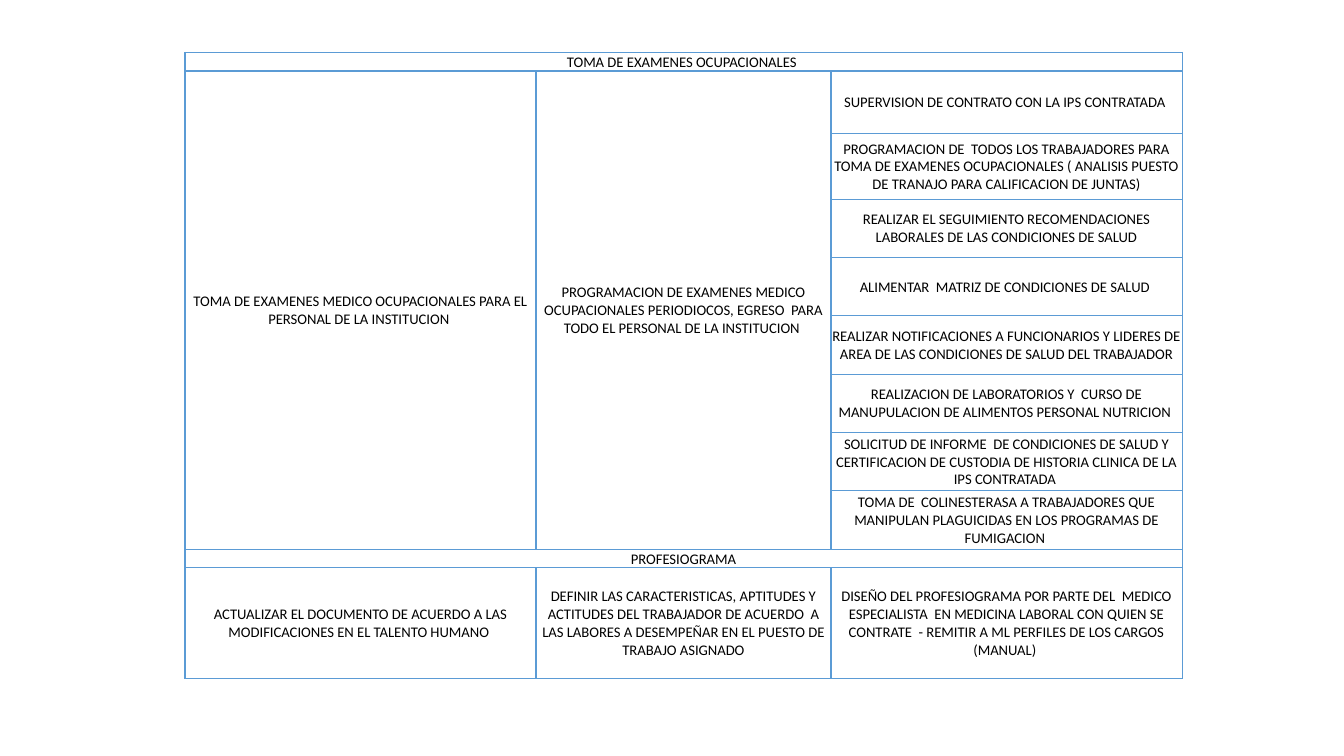
from pptx import Presentation
from pptx.dml.color import RGBColor
from pptx.enum.text import MSO_ANCHOR as Anchor, PP_ALIGN as Align
from pptx.oxml import parse_xml
from pptx.oxml.ns import nsdecls
from pptx.util import Cm, Pt

LINE = "5B9BD5"
INK = "000000"


def write(cell, text, size=10.5, font="Calibri", color=INK):
    cell.vertical_anchor = Anchor.MIDDLE
    cell.margin_left = cell.margin_right = cell.margin_top = Cm(0.02)
    cell.margin_bottom = 0
    par = cell.text_frame.paragraphs[0]
    par.alignment = Align.CENTER
    run = par.add_run()
    run.text = text
    run.font.size = Pt(size)
    run.font.name = font
    run.font.color.rgb = RGBColor.from_string(color)


def frame(cell, color=LINE, width=1):
    props = cell._tc.get_or_add_tcPr()
    for side in "LRTB":
        props.append(parse_xml(
            f'<a:ln{side} {nsdecls("a")} w="{Pt(width)}"><a:solidFill>'
            f'<a:srgbClr val="{color}"/></a:solidFill></a:ln{side}>'))
    cell.fill.background()


# Slide
deck = Presentation()
deck.slide_width, deck.slide_height = Cm(33.87), Cm(19.05)
slide = deck.slides.add_slide(deck.slide_layouts[6])

# Content: one task per row in the last column
tasks = [
    "SUPERVISION DE CONTRATO CON LA IPS CONTRATADA ",
    "PROGRAMACION DE  TODOS LOS TRABAJADORES PARA TOMA DE EXAMENES "
    "OCUPACIONALES ( ANALISIS PUESTO DE TRANAJO PARA CALIFICACION DE JUNTAS)",
    "REALIZAR EL SEGUIMIENTO RECOMENDACIONES LABORALES DE LAS CONDICIONES DE SALUD",
    "ALIMENTAR  MATRIZ DE CONDICIONES DE SALUD ",
    "REALIZAR NOTIFICACIONES A FUNCIONARIOS Y LIDERES DE  AREA DE LAS "
    "CONDICIONES DE SALUD DEL TRABAJADOR ",
    "REALIZACION DE LABORATORIOS Y  CURSO DE MANUPULACION DE ALIMENTOS "
    "PERSONAL NUTRICION ",
    "SOLICITUD DE INFORME  DE CONDICIONES DE SALUD Y CERTIFICACION DE "
    "CUSTODIA DE HISTORIA CLINICA DE LA IPS CONTRATADA ",
    "TOMA DE  COLINESTERASA A TRABAJADORES QUE MANIPULAN PLAGUICIDAS EN "
    "LOS PROGRAMAS DE FUMIGACION ",
]
exams = [
    "TOMA DE EXAMENES MEDICO OCUPACIONALES PARA EL PERSONAL DE LA INSTITUCION ",
    "PROGRAMACION DE EXAMENES MEDICO OCUPACIONALES PERIODIOCOS, EGRESO  PARA "
    "TODO EL PERSONAL DE LA INSTITUCION ",
]
profile = [
    "ACTUALIZAR EL DOCUMENTO DE ACUERDO A LAS MODIFICACIONES EN EL TALENTO HUMANO ",
    "DEFINIR LAS CARACTERISTICAS, APTITUDES Y ACTITUDES DEL TRABAJADOR DE "
    "ACUERDO  A LAS LABORES A DESEMPEÑAR EN EL PUESTO DE TRABAJO ASIGNADO",
    "DISEÑO DEL PROFESIOGRAMA POR PARTE DEL  MEDICO ESPECIALISTA  EN MEDICINA "
    "LABORAL CON QUIEN SE CONTRATE  - REMITIR A ML PERFILES DE LOS CARGOS (MANUAL) ",
]

# Table grid
wides = [8.85, 7.43, 8.85]
highs = [0.46, 1.58, 1.65] + [1.47] * 6 + [0.46, 2.79]
grid = slide.shapes.add_table(len(highs), len(wides), Cm(4.66), Cm(1.32),
                              Cm(sum(wides)), Cm(sum(highs))).table
grid.first_row = grid.horz_banding = False
for col, wide in zip(grid.columns, wides):
    col.width = Cm(wide)
for row, high in zip(grid.rows, highs):
    row.height = Cm(high)
for cell in grid.iter_cells():
    frame(cell)

# Section headings across all columns
last = len(tasks)
for row, head in [(0, "TOMA DE EXAMENES OCUPACIONALES "), (last + 1, "PROFESIOGRAMA")]:
    grid.cell(row, 0).merge(grid.cell(row, 2))
    write(grid.cell(row, 0), head)

# Exams section: two tall cells beside the tasks
for col, text in enumerate(exams):
    grid.cell(1, col).merge(grid.cell(last, col))
    write(grid.cell(1, col), text)
for row, text in enumerate(tasks, 1):
    write(grid.cell(row, 2), text)

# Job profile section
for col, text in enumerate(profile):
    write(grid.cell(last + 2, col), text)

deck.save("out.pptx")
